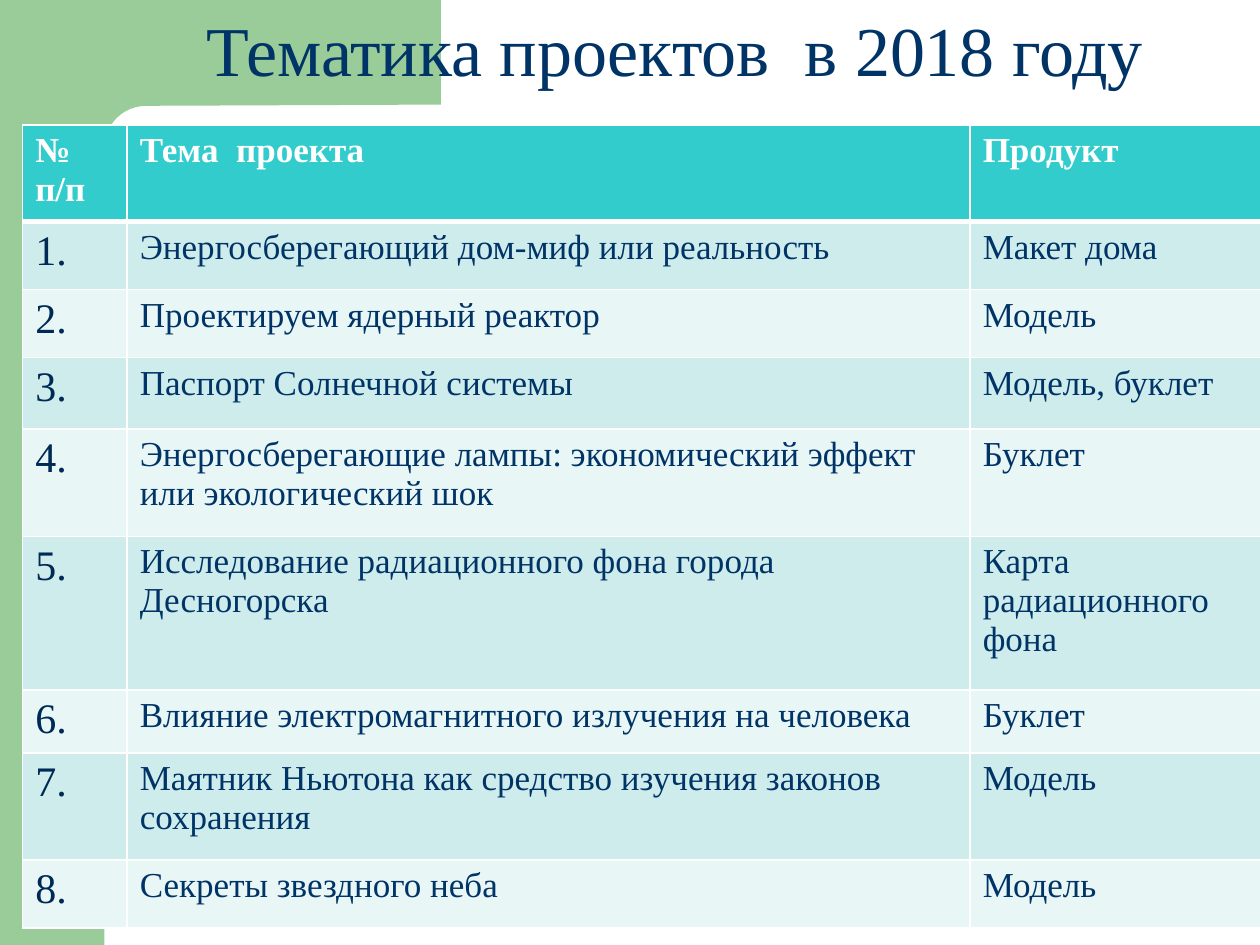
import math

from lxml import etree
from pptx import Presentation
from pptx import util as u
from pptx.dml.color import RGBColor
from pptx.enum import shapes, text
from pptx.oxml.ns import qn

GREEN = RGBColor(0x99, 0xCC, 0x99)
NAVY = RGBColor(0x00, 0x33, 0x66)
DARK_NAVY = RGBColor(0x00, 0x2A, 0x56)
TURQUOISE = RGBColor(0x33, 0xCC, 0xCC)
BANDS = RGBColor(0xCE, 0xEC, 0xEC), RGBColor(0xE8, 0xF6, 0xF6)
WHITE = RGBColor(0xFF, 0xFF, 0xFF)
FONT = "Times New Roman"

HEADINGS = "№ п/п", "Тема  проекта", "Продукт"
PROJECTS = [
    ("Энергосберегающий дом-миф или реальность", "Макет дома"),
    ("Проектируем ядерный реактор", "Модель"),
    ("Паспорт Солнечной системы", "Модель, буклет"),
    ("Энергосберегающие лампы: экономический эффект или экологический шок",
     "Буклет"),
    ("Исследование радиационного фона города Десногорска",
     "Карта радиационного фона"),
    ("Влияние электромагнитного излучения на человека", "Буклет"),
    ("Маятник Ньютона как средство изучения законов сохранения", "Модель"),
    ("Секреты звездного неба", "Модель"),
]
COLUMN_WIDTHS = 0.83, 6.69, 2.32
ROW_HEIGHTS = 0.57, 0.54, 0.54, 0.57, 0.85, 1.22, 0.4, 0.85, 0.54


def paint_green(part):
    part.fill.solid()
    part.fill.fore_color.rgb = GREEN
    part.line.fill.background()
    part.shadow.inherit = False


def style_font(font, size, color, bold=False):
    font.name = FONT
    font.size = u.Pt(size)
    font.bold = bold
    font.color.rgb = color


def add_corner(slide):
    """Green side band and top block with a rounded inner corner."""
    side_band = slide.shapes.add_shape(
        shapes.MSO_SHAPE.RECTANGLE, 0, 0, u.Inches(0.83), u.Inches(7.5))
    paint_green(side_band)

    radius, center_x, center_y = 0.33, 1.16, 1.17
    angles = [math.radians(90 + step * 7.5) for step in range(13)]
    arc = [(center_x + radius * math.cos(a), center_y - radius * math.sin(a))
           for a in angles]
    outline = [(3.5, 0), (3.5, 0.83), *arc, (0.83, 1.28), (0.5, 1.28), (0.5, 0)]
    points = [(u.Inches(x), u.Inches(y)) for x, y in outline]
    builder = slide.shapes.build_freeform(*points[0])
    builder.add_line_segments(points[1:], close=True)
    paint_green(builder.convert_to_shape())


def add_title(slide):
    title = slide.shapes.title
    title.left, title.top = u.Inches(1.41), 0
    title.width, title.height = u.Inches(7.89), u.Inches(0.77)
    frame = title.text_frame
    frame.text = "Тематика проектов  в 2018 году"
    frame.word_wrap = True
    frame.auto_size = text.MSO_AUTO_SIZE.SHAPE_TO_FIT_TEXT
    frame.vertical_anchor = text.MSO_ANCHOR.MIDDLE
    frame.paragraphs[0].alignment = text.PP_ALIGN.CENTER
    style_font(frame.paragraphs[0].runs[0].font, 40, NAVY)
    # Bring the title in front of the green corner
    slide.shapes._spTree.append(title._element)


def set_borders(cell, top, bottom):
    properties = cell._tc.get_or_add_tcPr()
    for side, points in (("L", 1), ("R", 1), ("T", top), ("B", bottom)):
        line = etree.SubElement(properties, qn(f"a:ln{side}"), w=str(u.Pt(points)))
        fill = etree.SubElement(line, qn("a:solidFill"))
        etree.SubElement(fill, qn("a:srgbClr"), val=str(WHITE))


def fill_cell(cell, words, row, column):
    is_header = row == 0
    set_borders(cell, top=3 if row == 1 else 1, bottom=3 if is_header else 1)
    cell.fill.solid()
    cell.fill.fore_color.rgb = TURQUOISE if is_header else BANDS[(row - 1) % 2]
    cell.text_frame.text = words
    font = cell.text_frame.paragraphs[0].runs[0].font
    if is_header:
        style_font(font, 20, WHITE, bold=True)
    elif column == 0:
        style_font(font, 24, DARK_NAVY)
    else:
        style_font(font, 20, NAVY)


def add_projects(slide):
    rows = [HEADINGS]
    rows += [(f"{number}.", *project) for number, project in enumerate(PROJECTS, 1)]
    frame = slide.shapes.add_table(
        len(rows), len(HEADINGS), u.Inches(0.18), u.Inches(0.99),
        u.Inches(sum(COLUMN_WIDTHS)), u.Inches(sum(ROW_HEIGHTS)))
    projects = frame.table
    for column, width in zip(projects.columns, COLUMN_WIDTHS):
        column.width = u.Inches(width)
    for row, height in zip(projects.rows, ROW_HEIGHTS):
        row.height = u.Inches(height)
    for r, row in enumerate(rows):
        for c, words in enumerate(row):
            fill_cell(projects.cell(r, c), words, r, c)
    # The header and row 6 grow with their text
    frame.height = u.Inches(6.38)


def main():
    prs = Presentation()
    prs.slide_width, prs.slide_height = u.Inches(10), u.Inches(7.5)
    slide = prs.slides.add_slide(prs.slide_layouts[5])
    add_corner(slide)
    add_title(slide)
    add_projects(slide)
    prs.save("out.pptx")


if __name__ == "__main__":
    main()
